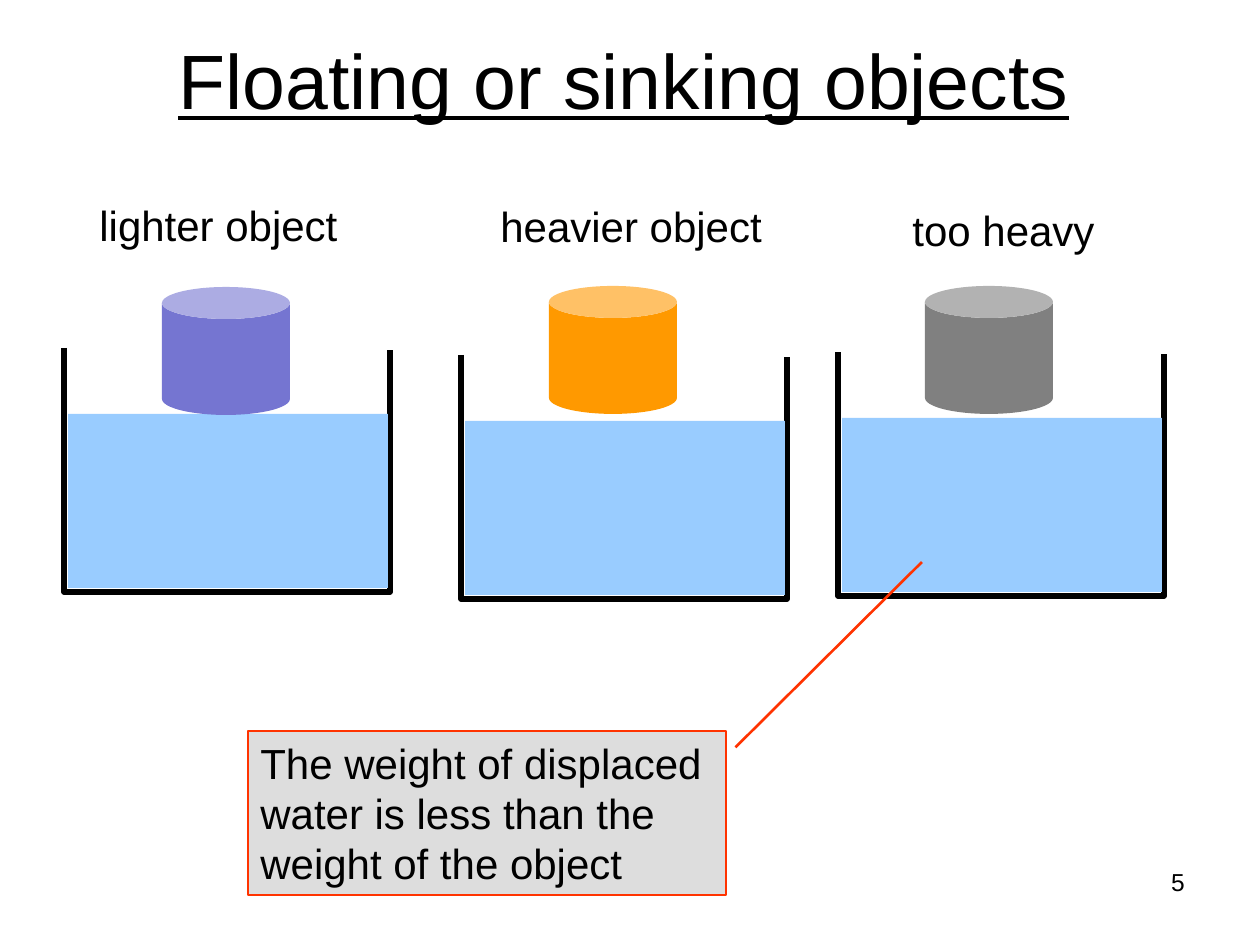
"""Build the slide on floating and sinking objects."""
from dataclasses import dataclass

from lxml import etree
from pptx import Presentation
from pptx import util as u
from pptx.dml.color import RGBColor
from pptx.enum import shapes, text
from pptx.oxml.ns import qn


@dataclass(frozen=True)
class Theme:
    font: str = "Arial"
    ink: str = "000000"
    water: str = "99CCFF"
    note: str = "DDDDDD"
    accent: str = "FF3300"
    title: int = 44
    body: int = 24
    number: int = 14


theme = Theme()
SCALE = u.Inches(1) / 126


def px(*values):
    return [round(v * SCALE) for v in values]


def style(tf, size, align=text.PP_ALIGN.LEFT, underline=None):
    for p in tf.paragraphs:
        p.alignment = align
        for r in p.runs:
            r.font.name = theme.font
            r.font.size = u.Pt(size)
            r.font.color.rgb = RGBColor.from_string(theme.ink)
            r.font.underline = underline


prs = Presentation()
prs.slide_width, prs.slide_height = px(1260, 945)
s = prs.slides.add_slide(prs.slide_layouts[5])

title = s.shapes.title
title.left, title.top, title.width, title.height = px(57, 0, 1134, 158)
title.text_frame.text = "Floating or sinking objects"
title.text_frame.vertical_anchor = text.MSO_ANCHOR.MIDDLE
style(title.text_frame, theme.title, text.PP_ALIGN.CENTER, True)

tanks = [
    ("lighter object", "7575D1", (64, 348), (162, 287), (87, 193, 263)),
    ("heavier object", "FF9900", (461, 355), (549, 286), (488, 194, 287)),
    ("too heavy", "808080", (838, 352), (925, 286), (900, 198, 208)),
]
for label, color, (x, y), can_at, label_at in tanks:
    outline = s.shapes.build_freeform(x, y, scale=SCALE)
    outline.add_line_segments(
        [(x, y + 244), (x + 326, y + 244), (x + 326, y + 2)], close=False)
    tank = outline.convert_to_shape()
    tank.shadow.inherit = False
    tank.fill.background()
    tank.line.color.rgb = RGBColor.from_string(theme.ink)
    tank.line.width = u.Pt(3)
    etree.SubElement(tank.line._get_or_add_ln(), qn("a:round"))

    for kind, box, fill in (
        (shapes.MSO_SHAPE.RECTANGLE, (x + 4, y + 66, 320, 174), theme.water),
        (shapes.MSO_SHAPE.CAN, (*can_at, 128, 128), color),
    ):
        sp = s.shapes.add_shape(kind, *px(*box))
        sp.shadow.inherit = False
        sp.fill.solid()
        sp.fill.fore_color.rgb = RGBColor.from_string(fill)
        sp.line.fill.background()

    tf = s.shapes.add_textbox(*px(*label_at, 63)).text_frame
    tf.text = label
    tf.word_wrap = False
    tf.auto_size = text.MSO_AUTO_SIZE.SHAPE_TO_FIT_TEXT
    style(tf, theme.body)

note = s.shapes.add_shape(shapes.MSO_SHAPE.LINE_CALLOUT_1, *px(248, 731, 478, 164))
for i, value in enumerate((0.1, 1.02, -1.03, 1.41)):
    note.adjustments[i] = value
note.shadow.inherit = False
note.fill.solid()
note.fill.fore_color.rgb = RGBColor.from_string(theme.note)
note.line.color.rgb = RGBColor.from_string(theme.accent)
note.line.width = u.Pt(1.5)
tf = note.text_frame
tf.text = "The weight of displaced\nwater is less than the\nweight of the object"
tf.vertical_anchor = text.MSO_ANCHOR.TOP
style(tf, theme.body)

tf = s.shapes.add_textbox(*px(903, 861, 294, 66)).text_frame
tf.text = "5"
tf.word_wrap = True
style(tf, theme.number, text.PP_ALIGN.RIGHT)

prs.save("out.pptx")
